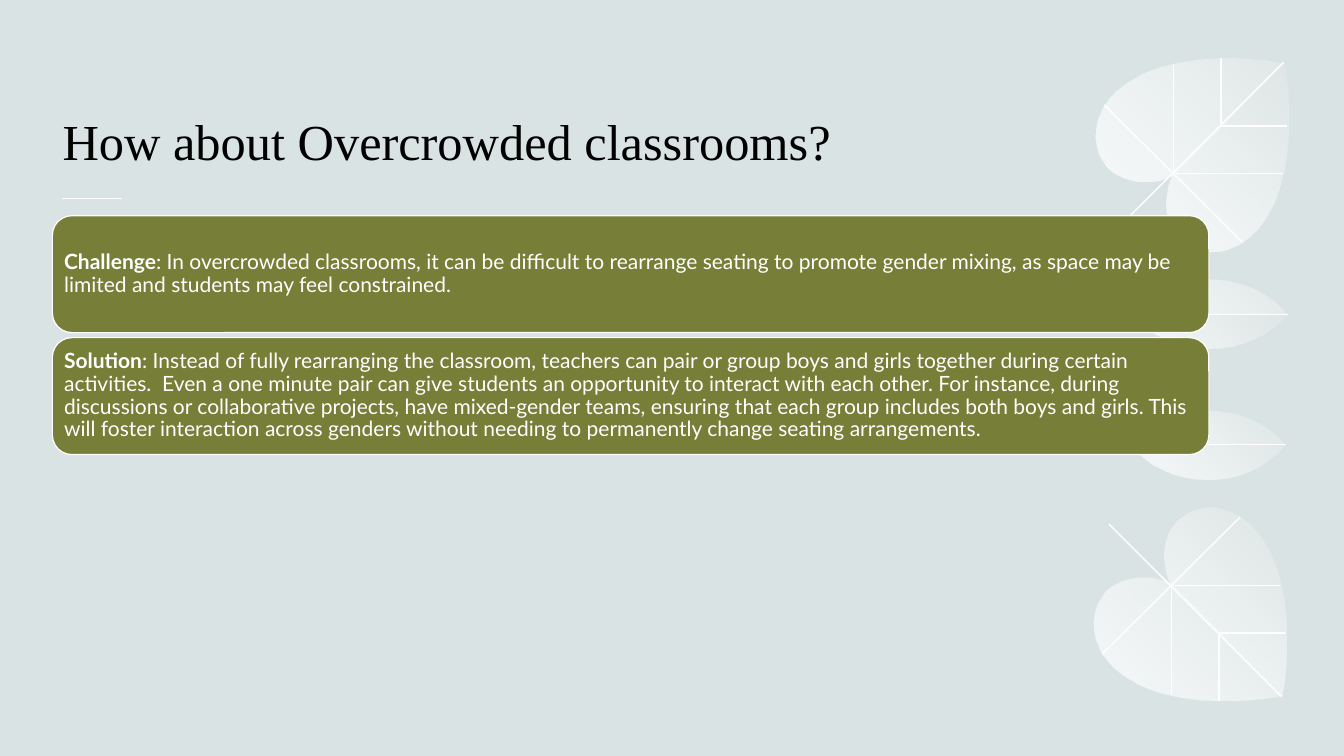
import pptx
import pptx.dml.color
import pptx.enum.shapes
import pptx.enum.text
import pptx.oxml.ns
import pptx.util
import lxml.etree

RGB = pptx.dml.color.RGBColor.from_string
THEME = {
    "background": RGB("DAE3E3"), "box": RGB("767E37"),
    "white": RGB("FFFFFF"), "black": RGB("000000"),
    "title font": "Times New Roman", "body font": "Lato",
    "title size": pptx.util.Pt(36), "body size": pptx.util.Pt(15),
    "leaf line": pptx.util.Pt(1), "box line": pptx.util.Pt(0.85),
}
# The slide is a grid of 1333 columns by 750 rows
CELL = pptx.util.Inches(0.01)
COLUMNS, ROWS = 1333, 750

presentation = pptx.Presentation()
presentation.slide_width = COLUMNS * CELL
presentation.slide_height = ROWS * CELL
slide = presentation.slides.add_slide(presentation.slide_layouts[5])
slide.background.fill.solid()
slide.background.fill.fore_color.rgb = THEME["background"]


def add_line(start, end):
    """Draw a thin white line between two grid points."""
    line = slide.shapes.add_connector(
        pptx.enum.shapes.MSO_CONNECTOR.STRAIGHT,
        *(round(value * CELL) for value in (*start, *end)))
    line.line.color.rgb = THEME["white"]
    line.line.width = THEME["leaf line"]
    lxml.etree.SubElement(line._element.spPr, pptx.oxml.ns.qn("a:effectLst"))


def add_outline(segments, closed):
    """Draw lines (one point) and Bézier curves (three points) on the grid."""
    # The frame encloses the curves themselves, not their control points
    edge = [segments[0][0]]
    for segment in segments[1:]:
        if len(segment) == 3:
            controls = [edge[-1], *segment]
            for t in (step / 16 for step in range(1, 16)):
                weights = ((1 - t) ** 3, 3 * t * (1 - t) ** 2,
                           3 * t ** 2 * (1 - t), t ** 3)
                edge.append([sum(weight * control[axis] for weight, control
                                 in zip(weights, controls)) for axis in (0, 1)])
        edge.append(segment[-1])
    left, right = (limit(x for x, y in edge) * CELL for limit in (min, max))
    top, bottom = (limit(y for x, y in edge) * CELL for limit in (min, max))
    builder = slide.shapes.build_freeform(left, top, scale=1.0)
    builder.add_line_segments([(right, bottom)], close=closed)
    outline = builder.convert_to_shape()
    outline.shadow.inherit = False

    # Write the segments into the freeform's path
    outline_path = next(outline._element.iter(pptx.oxml.ns.qn("a:path")))
    for command in list(outline_path):
        outline_path.remove(command)
    for index, segment in enumerate(segments):
        tag = "a:moveTo" if index == 0 else {1: "a:lnTo", 3: "a:cubicBezTo"}[len(segment)]
        command = lxml.etree.SubElement(outline_path, pptx.oxml.ns.qn(tag))
        for x, y in segment:
            point = lxml.etree.SubElement(command, pptx.oxml.ns.qn("a:pt"))
            point.set("x", str(round(x * CELL - left)))
            point.set("y", str(round(y * CELL - top)))
    if closed:
        lxml.etree.SubElement(outline_path, pptx.oxml.ns.qn("a:close"))
    return outline


# Leaf artwork: the lower cluster mirrors the upper one
VEINS = [((1273, 62), (1102, 233)), ((1095, 104), (1232, 240))]
BENT_VEINS = [[[(1272, 172)], [(1164, 172)], [(1164, 64)]],
              [[(1277, 125)], [(1211, 125)], [(1211, 58)]]]
MIDRIB = ((1073, 312), (1277, 312))
# Each leaf half: end opacity, then its segments
LEAF_HALVES = [
    (20, [[(1273, 63)], [(1162, 174)], [(1151, 178)],
          [(1129, 183), (1111, 177), (1099, 166)],
          [(1098, 165), (1096, 163), (1095, 161)],
          [(1067, 124), (1101, 44), (1255, 60)]]),
    (10, [[(1273, 62)], [(1276, 80)],
          [(1292, 234), (1212, 269), (1175, 240)],
          [(1160, 230), (1153, 210), (1159, 184)], [(1163, 173)]]),
    (20, [[(1199, 277)], [(1169, 277), (1141, 290), (1122, 312)], [(1277, 312)],
          [(1258, 290), (1231, 277), (1199, 277)]]),
    (10, [[(1277, 312)], [(1122, 312)],
          [(1141, 333), (1169, 346), (1199, 346)],
          [(1231, 346), (1258, 333), (1277, 312)]]),
]
START_OPACITY = 80
GRADIENT_ANGLE = 45

for shift, origin, direction in [(0, 0, 1), (-2, 753, -1)]:
    def place(points):
        return [(x + shift, origin + direction * y) for x, y in points]

    for vein in VEINS:
        add_line(*place(vein))
    for vein in BENT_VEINS:
        outline = add_outline([place(segment) for segment in vein], False)
        outline.fill.background()
        outline.line.color.rgb = THEME["white"]
        outline.line.width = THEME["leaf line"]
    for end_opacity, segments in LEAF_HALVES:
        leaf = add_outline([place(segment) for segment in segments], True)
        leaf.line.fill.background()
        leaf.fill.gradient()
        leaf.fill.gradient_angle = GRADIENT_ANGLE
        for stop in leaf.fill.gradient_stops:
            stop.color.rgb = THEME["white"]
        colors = leaf._element.spPr.iter(pptx.oxml.ns.qn("a:srgbClr"))
        for color, opacity in zip(colors, (START_OPACITY, end_opacity)):
            alpha = lxml.etree.SubElement(color, pptx.oxml.ns.qn("a:alpha"))
            alpha.set("val", str(opacity * 1000))
    add_line(*place(MIDRIB))

# Title with the short rule below it
title = slide.shapes.title
title_place = {"left": 62, "top": 44, "width": 946, "height": 130}
for name, cells in title_place.items():
    setattr(title, name, cells * CELL)
title_frame = {
    "margin_left": 0, "margin_right": 10 * CELL,
    "margin_top": 5 * CELL, "margin_bottom": 5 * CELL, "word_wrap": True,
    "auto_size": pptx.enum.text.MSO_AUTO_SIZE.NONE,
    "vertical_anchor": pptx.enum.text.MSO_ANCHOR.BOTTOM,
}
for name, value in title_frame.items():
    setattr(title.text_frame, name, value)
paragraph = title.text_frame.paragraphs[0]
paragraph.alignment = pptx.enum.text.PP_ALIGN.LEFT
run = paragraph.add_run()
run.text = "How about Overcrowded classrooms?"
run.font.name = THEME["title font"]
run.font.size = THEME["title size"]
run.font.color.rgb = THEME["black"]
add_line((62, 197), (121, 197))

# Challenge and solution boxes
BOX_LEFT, BOX_TOP, BOX_WIDTH, BOX_HEIGHT, BOX_PITCH = 52, 214, 1147, 116, 121
BOX_TEXTS = [
    ("Challenge", ": In overcrowded classrooms, it can be difficult to rearrange "
     "seating to promote gender mixing, as space may be limited and students may "
     "feel constrained."),
    ("Solution", ": Instead of fully rearranging the classroom, teachers can pair or "
     "group boys and girls together during certain activities.  Even a one minute "
     "pair can give students an opportunity to interact with each other. For "
     "instance, during discussions or collaborative projects, have mixed-gender "
     "teams, ensuring that each group includes both boys and girls. This will foster "
     "interaction across genders without needing to permanently change seating "
     "arrangements."),
]
box_frame = dict.fromkeys(
    ("margin_left", "margin_right", "margin_top", "margin_bottom"), 6 * CELL)
box_frame["word_wrap"] = True
box_frame["vertical_anchor"] = pptx.enum.text.MSO_ANCHOR.MIDDLE

for row, (label, explanation) in enumerate(BOX_TEXTS):
    box = slide.shapes.add_shape(
        pptx.enum.shapes.MSO_SHAPE.ROUNDED_RECTANGLE, BOX_LEFT * CELL,
        (BOX_TOP + row * BOX_PITCH) * CELL, BOX_WIDTH * CELL, BOX_HEIGHT * CELL)
    box.shadow.inherit = False
    box.fill.solid()
    box.fill.fore_color.rgb = THEME["box"]
    box.line.color.rgb = THEME["white"]
    box.line.width = THEME["box line"]
    for name, value in box_frame.items():
        setattr(box.text_frame, name, value)
    paragraph = box.text_frame.paragraphs[0]
    paragraph.alignment = pptx.enum.text.PP_ALIGN.LEFT
    paragraph.line_spacing = 0.9
    for text, bold in ((label, True), (explanation, False)):
        run = paragraph.add_run()
        run.text = text
        run.font.bold = bold
        run.font.name = THEME["body font"]
        run.font.size = THEME["body size"]
        run.font.color.rgb = THEME["white"]

presentation.save("out.pptx")
